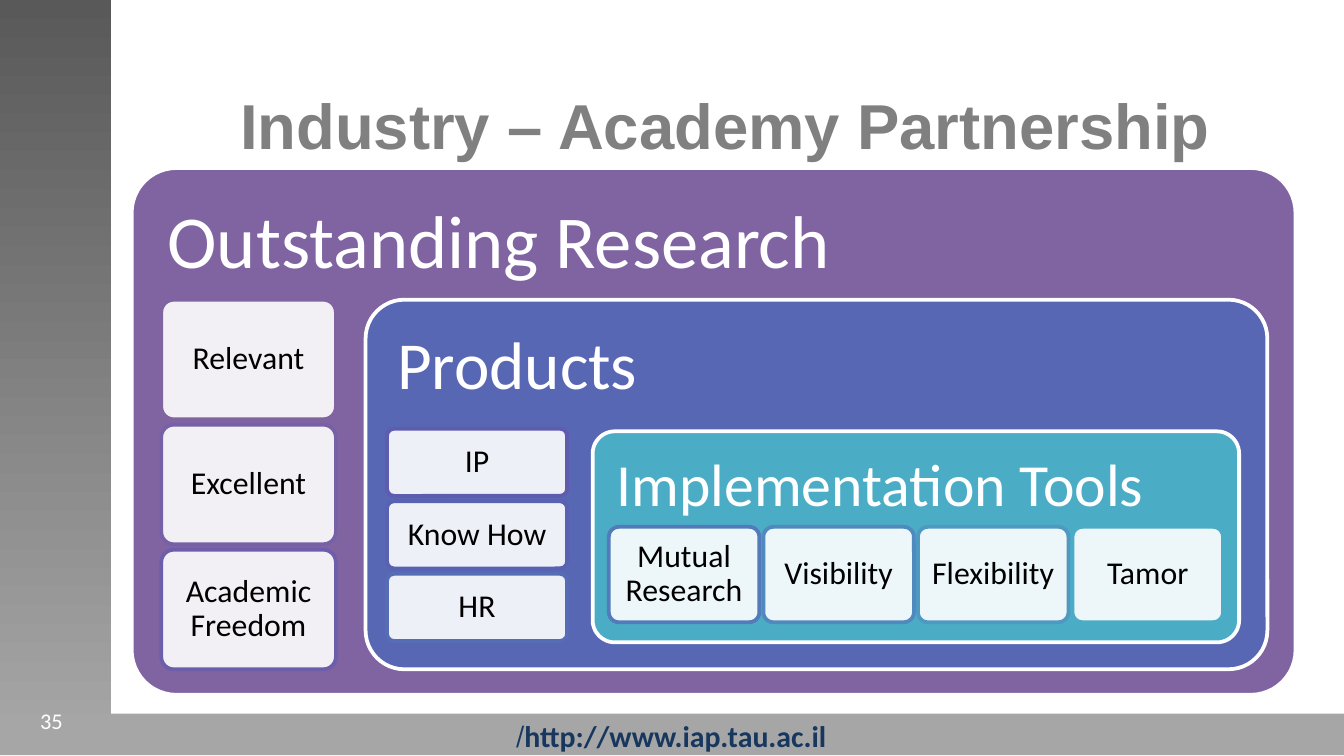
from lxml.etree import SubElement
from pptx import Presentation
from pptx.dml.color import RGBColor
from pptx.enum.shapes import MSO_SHAPE
from pptx.enum.text import MSO_ANCHOR, PP_ALIGN
from pptx.oxml.ns import qn
from pptx.util import Inches, Pt

WHITE = RGBColor(0xFF, 0xFF, 0xFF)
BLACK = RGBColor(0, 0, 0)
DARK_GREY = RGBColor(0x59, 0x59, 0x59)
MID_GREY = RGBColor(0x80, 0x80, 0x80)
LIGHT_GREY = RGBColor(0xA6, 0xA6, 0xA6)
NAVY = RGBColor(0x17, 0x37, 0x5E)
PURPLE = RGBColor(0x80, 0x64, 0xA2)
INDIGO = RGBColor(0x57, 0x67, 0xB4)
TEAL = RGBColor(0x4B, 0xAC, 0xC6)


def write(frame, text, size, color, align, anchor, inset, font="Calibri", bold=False):
    """Fill a text frame with one paragraph and equal insets."""
    frame.word_wrap = True
    frame.vertical_anchor = anchor
    frame.margin_left = frame.margin_right = Inches(inset)
    frame.margin_top = frame.margin_bottom = Inches(inset)
    frame.text = text
    paragraph = frame.paragraphs[0]
    paragraph.alignment = align
    paragraph.font.name = font
    paragraph.font.size = Pt(size)
    paragraph.font.bold = bold
    paragraph.font.color.rgb = color
    return paragraph


def add_block(kind, box, fill, line=None, corner=None):
    block = slide.shapes.add_shape(kind, *map(Inches, box))
    block.shadow.inherit = False
    block.fill.solid()
    block.fill.fore_color.rgb = fill
    if line is None:
        block.line.fill.background()
    else:
        block.line.color.rgb = line
        block.line.width = Pt(2)
    if corner is not None:
        block.adjustments[0] = corner
    return block


presentation = Presentation()
presentation.slide_width = Inches(10)
presentation.slide_height = Inches(10 * 9 / 16)
slide = presentation.slides.add_slide(presentation.slide_layouts[5])

# Side band, footer, page number
side_band = add_block(MSO_SHAPE.RECTANGLE, (0, 0, 0.83, 5.49), DARK_GREY)
side_band.fill.gradient()
side_band.fill.gradient_angle = 270
for stop, color in zip(side_band.fill.gradient_stops, (DARK_GREY, LIGHT_GREY)):
    stop.color.rgb = color
add_block(MSO_SHAPE.RECTANGLE, (0, 5.31, 10, 0.31), LIGHT_GREY)

web_address = slide.shapes.add_textbox(Inches(3.71), Inches(5.29), Inches(2.57), Inches(0.37))
address_line = write(web_address.text_frame, "http://www.iap.tau.ac.il/", 16, NAVY,
                     PP_ALIGN.CENTER, MSO_ANCHOR.TOP, 0.05, bold=True)
address_line._p.get_or_add_pPr().set("rtl", "1")
web_address.text_frame.word_wrap = False

page_number = slide.shapes.add_textbox(Inches(0.2), Inches(5.21), Inches(2.33), Inches(0.3))
write(page_number.text_frame, "35", 12, WHITE, PP_ALIGN.LEFT, MSO_ANCHOR.MIDDLE, 0.1)

title = slide.shapes.title
title.left, title.top, title.width, title.height = map(Inches, (1.14, 0.57, 8.51, 0.71))
write(title.text_frame, "Industry – Academy Partnership", 34, MID_GREY,
      PP_ALIGN.CENTER, MSO_ANCHOR.MIDDLE, 0.05, font="Arial", bold=True)

# Nested layers: heading, size, box, fill, corner, inset,
# then first tile box, tile step (x, y) and tiles with border colours
layers = [
    ("Outstanding Research", 40, (0.98, 1.25, 8.66, 3.92), PURPLE, 0.085, 0.17,
     (1.2, 2.23, 1.3, 0.89), (0, 0.93),
     [("Relevant", "8064A2"), ("Excellent", "7761A6"), ("Academic Freedom", "6C5EAA")]),
    ("Products", 36, (2.72, 2.23, 6.71, 2.75), INDIGO, 0.105, 0.15,
     (2.88, 3.19, 1.34, 0.5), (0, 0.54),
     [("IP", "5F5BAE"), ("Know How", "5961B2"), ("HR", "566DB6")]),
    ("Implementation Tools", 32, (4.41, 3.21, 4.81, 1.57), TEAL, 0.105, 0.13,
     (4.53, 3.92, 1.12, 0.71), (1.15, 0),
     [("Mutual Research", "537ABA"), ("Visibility", "5089BE"),
      ("Flexibility", "4E99C2"), ("Tamor", "4BACC6")]),
]
for heading, size, box, fill, corner, inset, first_tile, step, tiles in layers:
    layer = add_block(MSO_SHAPE.ROUNDED_RECTANGLE, box, fill, WHITE, corner)
    write(layer.text_frame, heading, size, WHITE, PP_ALIGN.LEFT,
          MSO_ANCHOR.TOP, inset).line_spacing = 0.9

    left, top, width, height = first_tile
    for index, (label, border) in enumerate(tiles):
        tile_box = (left + index * step[0], top + index * step[1], width, height)
        tile = add_block(MSO_SHAPE.ROUNDED_RECTANGLE, tile_box, WHITE,
                         RGBColor.from_string(border), 0.105)
        tile_color = tile._element.spPr.find(qn("a:solidFill"))[0]
        SubElement(tile_color, qn("a:alpha"), val="90000")
        write(tile.text_frame, label, 17, BLACK, PP_ALIGN.CENTER,
              MSO_ANCHOR.MIDDLE, 0.07).line_spacing = 0.9

presentation.save("out.pptx")
